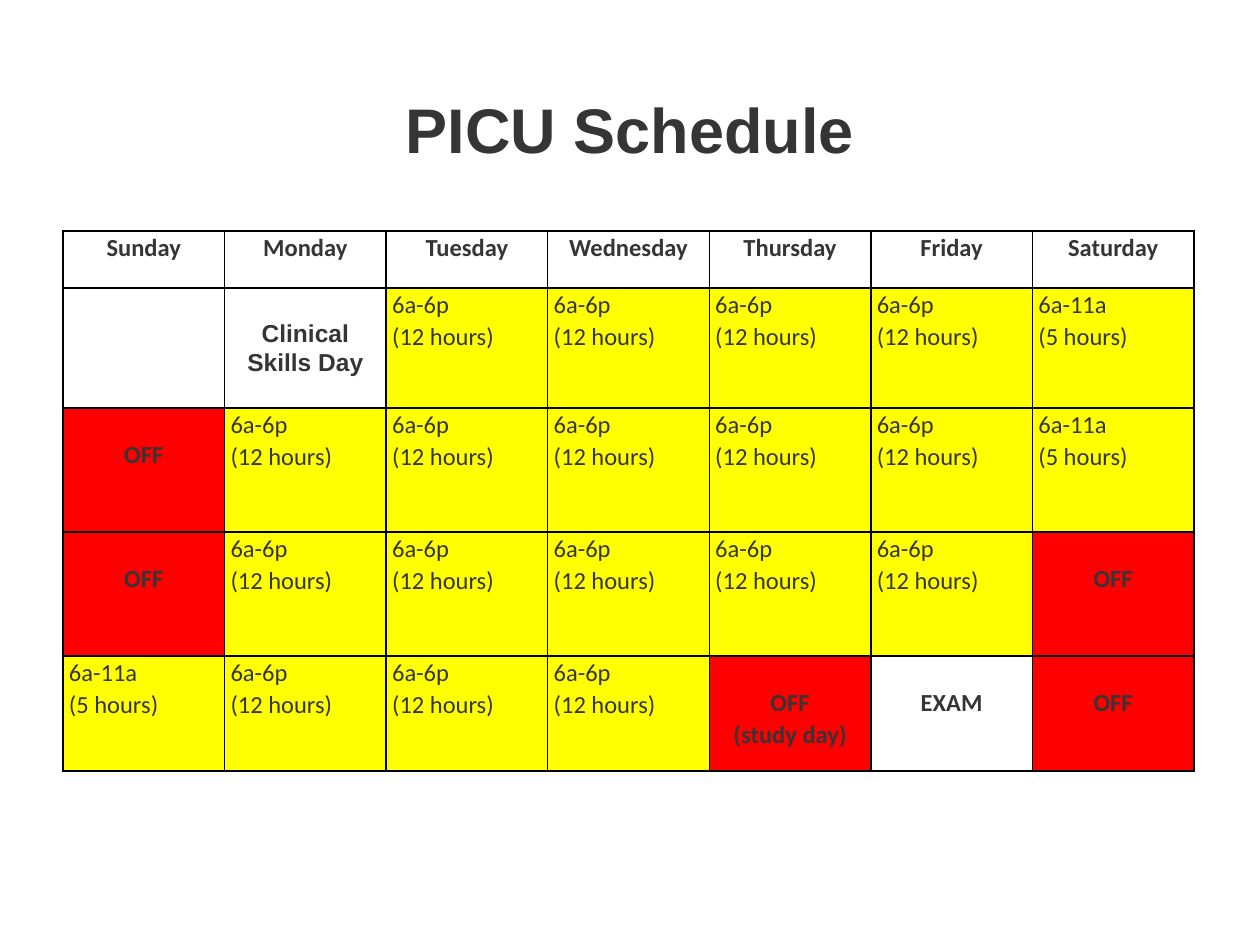
import pptx
import pptx.dml.color
import pptx.enum.text
import pptx.oxml
import pptx.oxml.ns
import pptx.util

PX = 914400 / 126
INK, YELLOW, RED = "353535", "FFFF00", "FF0000"
CENTER = pptx.enum.text.PP_ALIGN.CENTER
LEFT = pptx.enum.text.PP_ALIGN.LEFT

DAYS = ["Sunday", "Monday", "Tuesday", "Wednesday", "Thursday", "Friday", "Saturday"]
LONG, SHORT = "6a-6p\n(12 hours)", "6a-11a\n(5 hours)"
OFF, STUDY, SKILLS, EXAM = "OFF", "OFF\n(study day)", "Clinical Skills Day", "EXAM"
SCHEDULE = [
    DAYS,
    ["", SKILLS] + [LONG] * 4 + [SHORT],
    [OFF] + [LONG] * 5 + [SHORT],
    [OFF] + [LONG] * 5 + [OFF],
    [SHORT] + [LONG] * 3 + [STUDY, EXAM, OFF],
]
FILLS = {LONG: YELLOW, SHORT: YELLOW, OFF: RED, STUDY: RED}
WEEK_HEIGHTS = [57, 120, 124, 124, 115]


def px(length):
    return pptx.util.Emu(round(length * PX))


def color(hex_code):
    return pptx.dml.color.RGBColor.from_string(hex_code)


def style(paragraph, face, size, bold, align):
    paragraph.alignment = align
    paragraph.font.name = face
    paragraph.font.size = pptx.util.Pt(size)
    paragraph.font.bold = bold
    paragraph.font.color.rgb = color(INK)


def add_borders(cell):
    properties = cell._tc.get_or_add_tcPr()
    for position, side in enumerate("LRTB"):
        border = pptx.oxml.parse_xml(
            f'<a:ln{side} {pptx.oxml.ns.nsdecls("a")} w="12700"><a:solidFill>'
            f'<a:srgbClr val="000000"/></a:solidFill></a:ln{side}>'
        )
        properties.insert(position, border)


def fill_cell(cell, entry):
    is_shift = entry in (LONG, SHORT)
    cell.margin_left = cell.margin_right = px(6)
    cell.margin_top = px(0 if is_shift or entry in DAYS else 30)
    cell.margin_bottom = 0
    if entry in FILLS:
        cell.fill.solid()
        cell.fill.fore_color.rgb = color(FILLS[entry])
    else:
        cell.fill.background()
    add_borders(cell)
    cell.text = entry
    for paragraph in cell.text_frame.paragraphs:
        face = "Arial" if entry == SKILLS else "Calibri"
        style(paragraph, face, 14, not is_shift, LEFT if is_shift else CENTER)
        paragraph.line_spacing = 1.07


def add_title(slide, left, top, width, height):
    heading = slide.shapes.add_textbox(px(left), px(top), px(width), px(height)).text_frame
    heading.word_wrap = True
    heading.margin_top = px(13)
    heading.text = "PICU Schedule"
    style(heading.paragraphs[0], "Arial", 36, True, CENTER)


def add_calendar(slide, left, top, width, height):
    calendar = slide.shapes.add_table(
        len(SCHEDULE), len(DAYS), px(left), px(top), px(width), px(height)
    ).table
    calendar.first_row = calendar.horz_banding = False
    for day in calendar.columns:
        day.width = px(width / len(DAYS))
    for week, week_height in zip(calendar.rows, WEEK_HEIGHTS):
        week.height = px(height * week_height / sum(WEEK_HEIGHTS))
    for week, entries in zip(calendar.rows, SCHEDULE):
        for cell, entry in zip(week.cells, entries):
            fill_cell(cell, entry)


def main():
    deck = pptx.Presentation()
    deck.slide_width, deck.slide_height = px(1260), px(945)
    slide = deck.slides.add_slide(deck.slide_layouts[6])
    add_calendar(slide, 63, 231, 1131, 540)
    add_title(slide, 63, 78, 1134, 132)
    deck.save("out.pptx")


if __name__ == "__main__":
    main()
